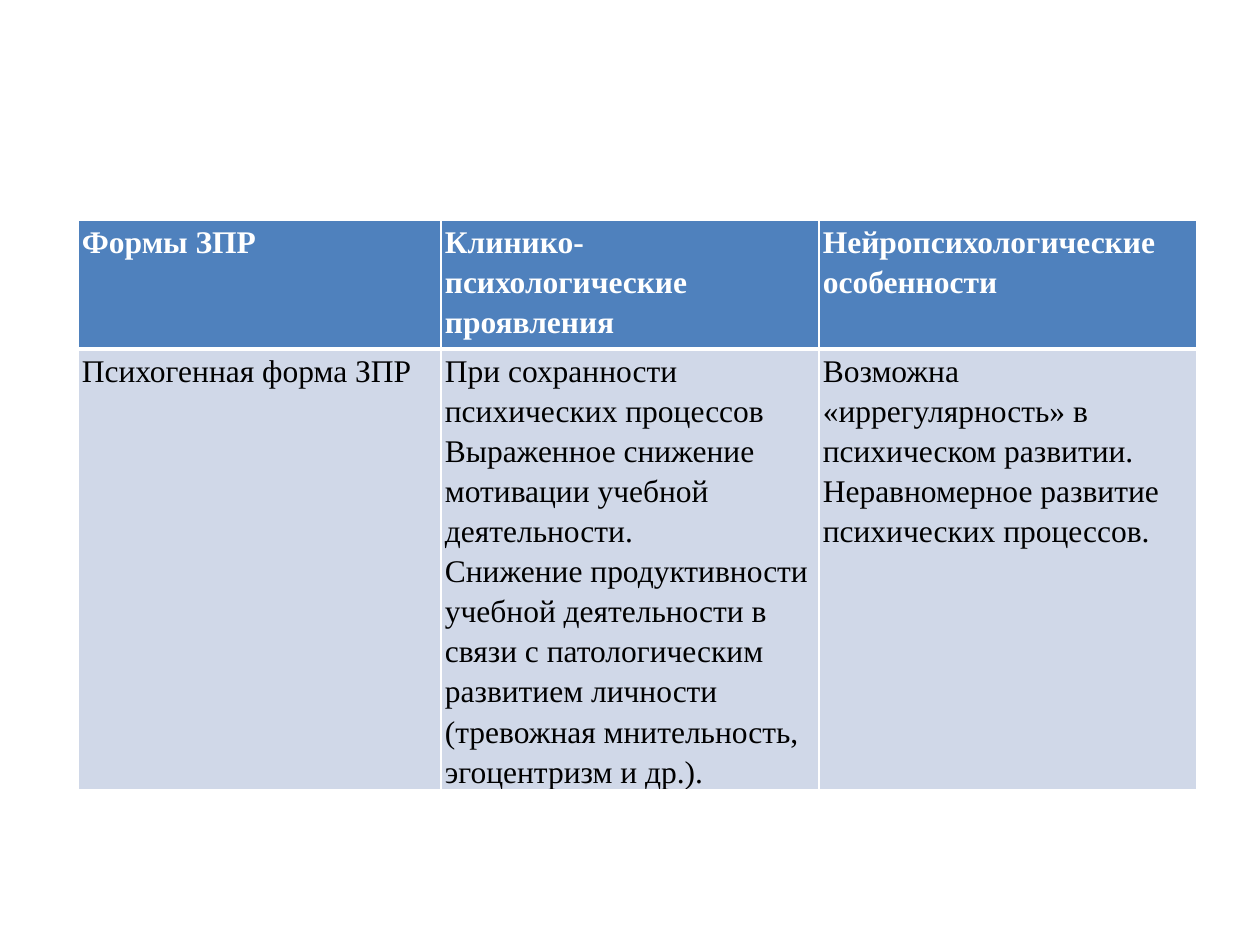
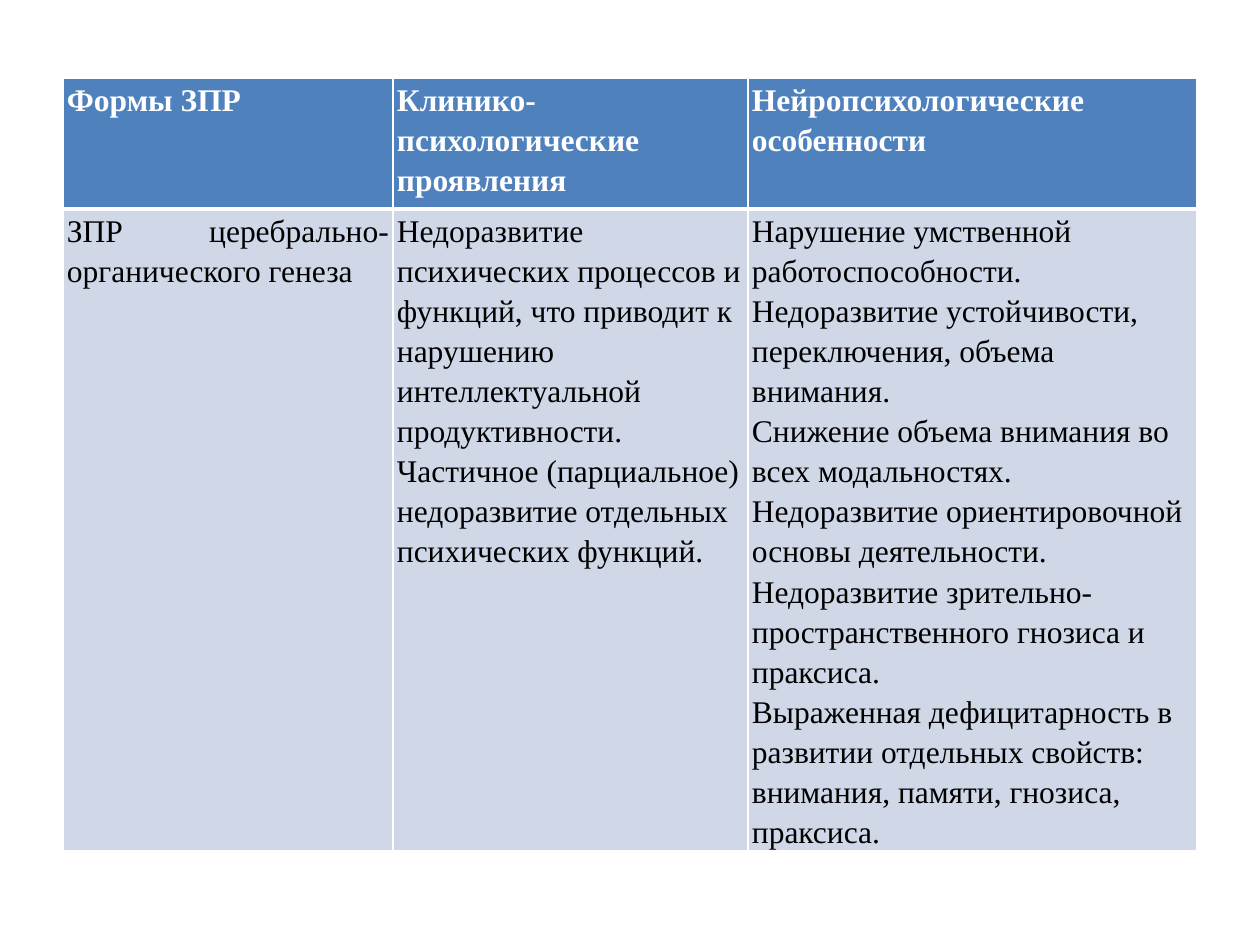
from lxml.etree import SubElement
from pptx import Presentation
from pptx.dml.color import RGBColor
from pptx.enum.text import PP_ALIGN
from pptx.oxml.ns import qn
from pptx.util import Emu, Pt

PX = 914400 // 126  # one px in EMU
FONT = "Times New Roman"
SIZE = Pt(18)
WHITE = RGBColor(0xFF, 0xFF, 0xFF)
BLACK = RGBColor(0, 0, 0)
BLUE = RGBColor(0x4F, 0x81, 0xBD)
PALE = RGBColor(0xD0, 0xD8, 0xE8)

HEADS = [
    "Формы ЗПР",
    "Клинико- психологические проявления",
    "Нейропсихологические особенности",
]

# Body cells: one string per column, one line per paragraph
PSYCHO = [
    "Психогенная форма ЗПР",
    "При сохранности психических процессов Выраженное снижение мотивации "
    "учебной деятельности.\n"
    "Снижение продуктивности учебной деятельности в связи с патологическим "
    "развитием личности (тревожная мнительность, эгоцентризм и др.).",
    "Возможна «иррегулярность» в психическом развитии. "
    "Неравномерное развитие психических процессов.",
]
ORGANIC = [
    "ЗПР церебрально-органического генеза",
    "Недоразвитие психических процессов и функций, что приводит к нарушению "
    "интеллектуальной продуктивности.\n"
    "Частичное (парциальное) недоразвитие отдельных психических функций.",
    "Нарушение умственной работоспособности. Недоразвитие устойчивости, "
    "переключения, объема внимания.\n"
    "Снижение объема внимания во всех модальностях. Недоразвитие "
    "ориентировочной основы деятельности. Недоразвитие "
    "зрительно-пространственного гнозиса и праксиса.\n"
    "Выраженная дефицитарность в развитии отдельных свойств: внимания, "
    "памяти, гнозиса, праксиса.",
]


def px(n):
    return Emu(n * PX)


def edge(cell, top, bottom):
    """Draw white cell borders; widths are in points."""
    props = cell._tc.get_or_add_tcPr()
    for side, width in (("L", 1), ("R", 1), ("T", top), ("B", bottom)):
        line = SubElement(props, qn(f"a:ln{side}"), w=str(Pt(width)))
        fill = SubElement(line, qn("a:solidFill"))
        SubElement(fill, qn("a:srgbClr"), val=str(WHITE))


def write(cell, text, color, bold, align):
    cell.text_frame.text = text
    for para in cell.text_frame.paragraphs:
        para.line_spacing = 1.15
        para.alignment = align
        for run in para.runs:
            font = run.font
            font.name, font.size, font.bold = FONT, SIZE, bold
            font.color.rgb = color


def style(cell, text, head, align):
    cell.margin_left = cell.margin_right = px(4)
    cell.margin_top = cell.margin_bottom = 0
    # The seam below the head row is thicker
    edge(cell, 1 if head else 3, 3 if head else 1)
    cell.fill.solid()
    cell.fill.fore_color.rgb = BLUE if head else PALE
    write(cell, text, WHITE if head else BLACK, head, align)


def add_grid(slide, left, top, widths, heights, body):
    frame = slide.shapes.add_table(
        len(heights), len(widths), px(left), px(top),
        px(sum(widths)), px(sum(heights)))
    table = frame.table
    for col, width in zip(table.columns, widths):
        col.width = px(width)
    for row, height in zip(table.rows, heights):
        row.height = px(height)
    for r, texts in enumerate((HEADS, body)):
        for c, text in enumerate(texts):
            first = r == 1 and c == 0
            align = PP_ALIGN.JUSTIFY if first else PP_ALIGN.LEFT
            style(table.cell(r, c), text, r == 0, align)


def main():
    deck = Presentation()
    deck.slide_width, deck.slide_height = px(1260), px(945)
    blank = deck.slide_layouts[6]

    # Psychogenic form
    add_grid(deck.slides.add_slide(blank), 78, 220,
             (363, 378, 378), (129, 320), PSYCHO)
    # Cerebral-organic form
    add_grid(deck.slides.add_slide(blank), 63, 78,
             (330, 355, 449), (131, 627), ORGANIC)

    deck.save("out.pptx")


if __name__ == "__main__":
    main()
